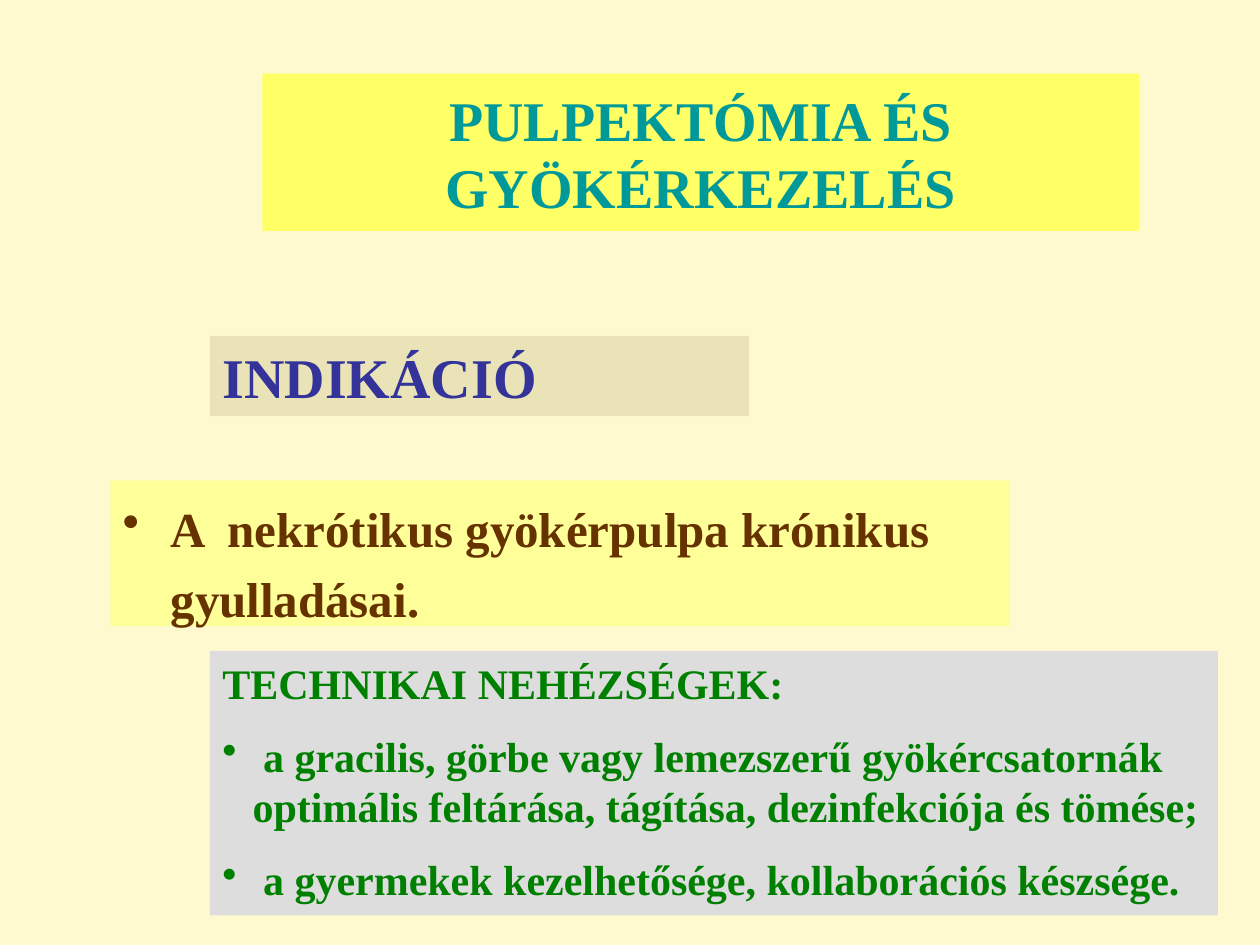
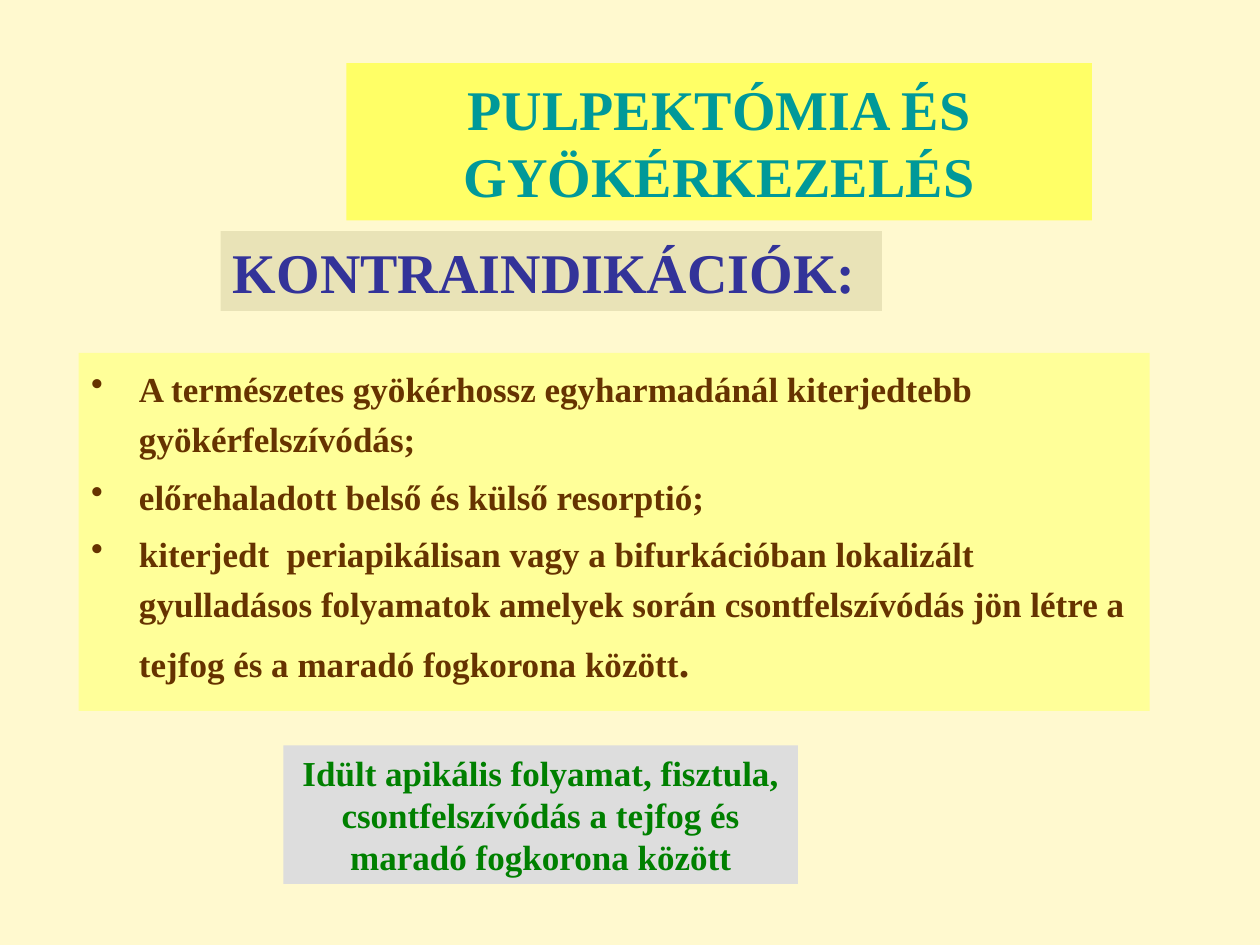
from dataclasses import dataclass

from lxml import etree
from pptx import Presentation
from pptx.dml.color import RGBColor
from pptx.enum.text import MSO_ANCHOR, PP_ALIGN
from pptx.oxml.ns import qn
from pptx.util import Emu, Inches, Pt

LEFT, CENTER = PP_ALIGN.LEFT, PP_ALIGN.CENTER
TOP, MIDDLE = MSO_ANCHOR.TOP, MSO_ANCHOR.MIDDLE

FONT = "Times New Roman"
COLORS = {
    "page": "FFF9CF",
    "title_band": "FFFF66", "title_text": "009999",
    "heading_band": "E9E3B7", "heading_text": "333399",
    "list_band": "FFFF99", "list_text": "663300",
    "note_band": "DDDDDD", "note_text": "008000",
}

# Grid: 24 columns and rows to the inch
WIDTH, HEIGHT = Inches(10), Inches(7.5)
COLUMNS, ROWS = 240, 180


@dataclass(frozen=True)
class Style:
    name: str
    align: PP_ALIGN = LEFT
    anchor: MSO_ANCHOR = TOP
    line_spacing: float = 1.0
    gap: float = 0
    hang: float = 0


@dataclass(frozen=True)
class Line:
    runs: tuple[tuple[str, float], ...]  # text and size in points
    bullet: bool = False


@dataclass(frozen=True)
class Panel:
    style: Style
    cell: tuple[float, float, float, float]  # column, row, columns, rows
    lines: tuple[Line, ...]


TITLE = Style("title", align=CENTER, anchor=MIDDLE)
HEADING = Style("heading")
LISTING = Style("list", line_spacing=1.2, gap=4, hang=0.38)
NOTE = Style("note", gap=13, hang=0.24)
CAPTION = Style("note", align=CENTER, anchor=MIDDLE)


def line(text: str, size: float, bullet: bool = False) -> Line:
    return Line(((text, size),), bullet)


TITLE_LINES = (line("PULPEKTÓMIA ÉS GYÖKÉRKEZELÉS", 32),)

INDICATION = (
    Panel(TITLE, (50, 14, 167, 30), TITLE_LINES),
    Panel(LISTING, (21, 91.5, 171.3, 27.8), (
        line("A  nekrótikus gyökérpulpa krónikus gyulladásai.", 28, True),
    )),
    Panel(HEADING, (40, 64, 102.7, 15.3), (line("INDIKÁCIÓ", 32),)),
    Panel(NOTE, (40, 124, 192, 50.4), (
        line("TECHNIKAI NEHÉZSÉGEK:", 24),
        line(" a gracilis, görbe vagy lemezszerű gyökércsatornák optimális "
             "feltárása, tágítása, dezinfekciója és tömése;", 24, True),
        line(" a gyermekek kezelhetősége, kollaborációs készsége.", 24, True),
    )),
)

CONTRAINDICATIONS = (
    Panel(TITLE, (66, 12, 142, 30), TITLE_LINES),
    Panel(LISTING, (15, 67.2, 204, 68.2), (
        line("A természetes gyökérhossz egyharmadánál kiterjedtebb "
             "gyökérfelszívódás;", 20, True),
        line("előrehaladott belső és külső resorptió;", 20, True),
        Line((("kiterjedt  periapikálisan vagy a bifurkációban lokalizált "
               "gyulladásos folyamatok amelyek során csontfelszívódás jön "
               "létre a tejfog és a maradó fogkorona között", 20),
              (".", 24)), True),
    )),
    Panel(HEADING, (42, 44, 126, 15.2), (line("KONTRAINDIKÁCIÓK:", 32),)),
    Panel(CAPTION, (54, 142, 98, 26.4), (
        line("Idült apikális folyamat, fisztula, csontfelszívódás a tejfog "
             "és maradó fogkorona között", 20),
    )),
)


def color(name: str) -> RGBColor:
    return RGBColor.from_string(COLORS[name])


def add_bullet(paragraph, hang: float) -> None:
    properties = paragraph._p.get_or_add_pPr()
    properties.set("marL", str(Inches(hang)))
    properties.set("indent", str(-Inches(hang)))
    etree.SubElement(properties, qn("a:buChar")).set("char", "•")


def draw_panel(slide, panel: Panel) -> None:
    style = panel.style
    column, row, columns, rows = panel.cell
    band = slide.shapes.add_textbox(
        Emu(round(WIDTH * column / COLUMNS)), Emu(round(HEIGHT * row / ROWS)),
        Emu(round(WIDTH * columns / COLUMNS)), Emu(round(HEIGHT * rows / ROWS)))
    band.fill.solid()
    band.fill.fore_color.rgb = color(f"{style.name}_band")
    frame = band.text_frame
    frame.word_wrap = True
    frame.vertical_anchor = style.anchor

    for index, content in enumerate(panel.lines):
        paragraph = frame.add_paragraph() if index else frame.paragraphs[0]
        if content.bullet:
            add_bullet(paragraph, style.hang)
        paragraph.alignment = style.align
        paragraph.line_spacing = style.line_spacing
        if index:
            paragraph.space_before = Pt(style.gap)
        for text, size in content.runs:
            run = paragraph.add_run()
            run.text = text
            run.font.name = FONT
            run.font.size = Pt(size)
            run.font.bold = True
            run.font.color.rgb = color(f"{style.name}_text")


def main() -> None:
    deck = Presentation()
    deck.slide_width, deck.slide_height = WIDTH, HEIGHT

    # Shared page colour
    page = deck.slide_master.background.fill
    page.solid()
    page.fore_color.rgb = color("page")

    # Slides
    for panels in (INDICATION, CONTRAINDICATIONS):
        slide = deck.slides.add_slide(deck.slide_layouts[6])
        for panel in panels:
            draw_panel(slide, panel)

    deck.save("out.pptx")


if __name__ == "__main__":
    main()
